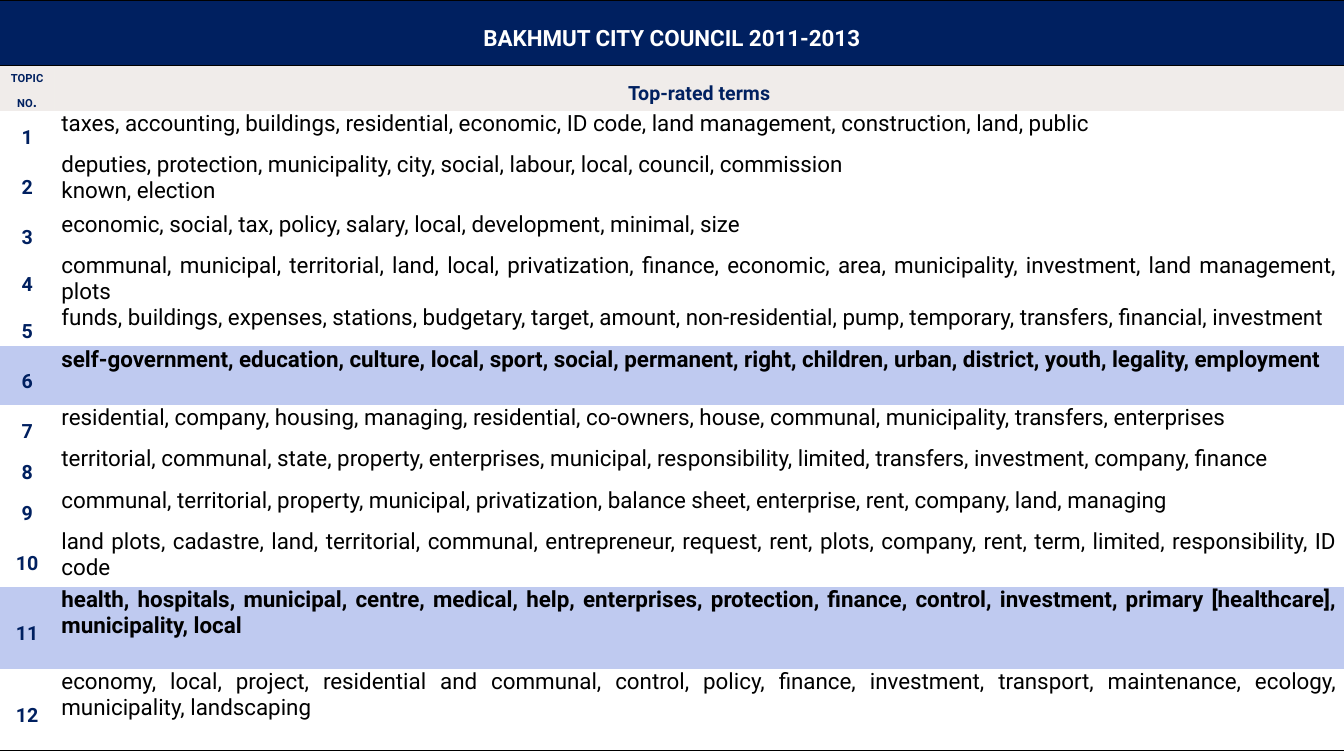
from dataclasses import dataclass

from lxml import etree
from pptx import Presentation
from pptx.dml.color import RGBColor
from pptx.enum.text import MSO_ANCHOR, PP_ALIGN
from pptx.oxml.ns import qn
from pptx.util import Inches, Pt

CENTER, JUSTIFY = PP_ALIGN.CENTER, PP_ALIGN.JUSTIFY
MIDDLE, TOP = MSO_ANCHOR.MIDDLE, MSO_ANCHOR.TOP
NO_STYLE_NO_GRID = "{2D5ABB26-0587-4C30-8999-92F81FD0307C}"
BLANK_LAYOUT = 6


@dataclass(frozen=True)
class Theme:
    font: str = "Roboto"
    navy: str = "002060"
    white: str = "FFFFFF"
    black: str = "000000"
    beige: str = "B6A29A"
    highlight: str = "BFCAF0"
    beige_alpha: int = 20000
    body_size: float = 16
    number_size: float = 14
    small_size: float = 8
    dot_size: float = 10.5


theme = Theme()

# Row height in inches, lines of terms, highlighted
topics = [
    (0.41, ["taxes, accounting, buildings, residential, economic, ID code, land management, "
            "construction, land, public"], False),
    (0.59, ["deputies, protection, municipality, city, social, labour, local, council, commission",
            "known, election"], False),
    (0.41, ["economic, social, tax, policy, salary, local, development, minimal, size"], False),
    (0.41, ["communal, municipal, territorial, land, local, privatization, finance, economic, area, "
            "municipality, investment, land management, plots"], False),
    (0.41, ["funds, buildings, expenses, stations, budgetary, target, amount, non-residential, pump, "
            "temporary, transfers, financial, investment"], False),
    (0.58, ["self-government, education, culture, local, sport, social, permanent, right, children, "
            "urban, district, youth, legality, employment"], True),
    (0.41, ["residential, company, housing, managing, residential, co-owners, house, communal, "
            "municipality, transfers, enterprises"], False),
    (0.41, ["territorial, communal, state, property, enterprises, municipal, responsibility, limited, "
            "transfers, investment, company, finance"], False),
    (0.41, ["communal, territorial, property, municipal, privatization, balance sheet, enterprise, "
            "rent, company, land, managing"], False),
    (0.58, ["land plots, cadastre, land, territorial, communal, entrepreneur, request, rent, plots, "
            "company, rent, term, limited, responsibility, ID code"], False),
    (0.81, ["health, hospitals, municipal, centre, medical, help, enterprises, protection, finance, "
            "control, investment, primary [healthcare], municipality, local"], True),
    (0.81, ["economy, local, project, residential and communal, control, policy, finance, investment, "
            "transport, maintenance, ecology, municipality, landscaping"], False),
]


def write_cell(cell, paragraphs, color, bold=True, fill=None, align=CENTER, anchor=MIDDLE):
    """Fill a cell; each paragraph is a list of (text, size) runs."""
    cell.margin_left = cell.margin_right = Inches(0.07)
    cell.margin_top = cell.margin_bottom = 0
    cell.vertical_anchor = anchor
    if fill:
        cell.fill.solid()
        cell.fill.fore_color.rgb = RGBColor.from_string(fill)
    else:
        cell.fill.background()
    for index, runs in enumerate(paragraphs):
        frame = cell.text_frame
        paragraph = frame.add_paragraph() if index else frame.paragraphs[0]
        paragraph.alignment = align
        if align == CENTER:
            paragraph.line_spacing = 1.5
        for text, size in runs:
            run = paragraph.add_run()
            run.text = text
            run.font.name = theme.font
            run.font.size = Pt(size)
            run.font.bold = bold
            run.font.color.rgb = RGBColor.from_string(color)


def add_borders(cell, sides):
    properties = cell._tc.get_or_add_tcPr()
    for position, side in enumerate(sides):
        line = etree.Element(qn(f"a:ln{side}"), w=str(Pt(1)))
        solid = etree.SubElement(line, qn("a:solidFill"))
        etree.SubElement(solid, qn("a:srgbClr"), val=theme.black)
        properties.insert(position, line)


presentation = Presentation()
presentation.slide_width = Inches(13.33)
presentation.slide_height = Inches(7.5)
slide = presentation.slides.add_slide(presentation.slide_layouts[BLANK_LAYOUT])

row_heights = [0.65, 0.29] + [height for height, _, _ in topics]
table_shape = slide.shapes.add_table(
    len(row_heights), 2, 0, 0, Inches(13.33), Inches(sum(row_heights)))
table = table_shape.table
table.first_row = table.horz_banding = False
table._tbl.tblPr.find(qn("a:tableStyleId")).text = NO_STYLE_NO_GRID
for column, width in zip(table.columns, (0.54, 12.79)):
    column.width = Inches(width)
for row, height in zip(table.rows, row_heights):
    row.height = Inches(height)

# Title row and column headings
title_cell = table.cell(0, 0)
title_cell.merge(table.cell(0, 1))
write_cell(title_cell, [[("BAKHMUT CITY COUNCIL 2011-2013", theme.body_size)]],
           theme.white, fill=theme.navy)
headings = [
    [("TOPIC NO", theme.small_size), (".", theme.dot_size)],
    [("Top-rated terms", theme.number_size)],
]
for column, heading in enumerate(headings):
    cell = table.cell(1, column)
    write_cell(cell, [heading], theme.navy, fill=theme.beige)
    fill_color = cell._tc.tcPr.find(qn("a:solidFill")).find(qn("a:srgbClr"))
    etree.SubElement(fill_color, qn("a:alpha"), val=str(theme.beige_alpha))

# Topics
for number, (_, lines, highlighted) in enumerate(topics, start=1):
    fill = theme.highlight if highlighted else None
    write_cell(table.cell(number + 1, 0), [[(str(number), theme.number_size)]],
               theme.navy, fill=fill)
    write_cell(table.cell(number + 1, 1), [[(line, theme.body_size)] for line in lines],
               theme.black, bold=highlighted, fill=fill, align=JUSTIFY, anchor=TOP)

for column in range(2):
    add_borders(table.cell(0, column), "TB")
    add_borders(table.cell(len(row_heights) - 1, column), "B")

presentation.save("out.pptx")
